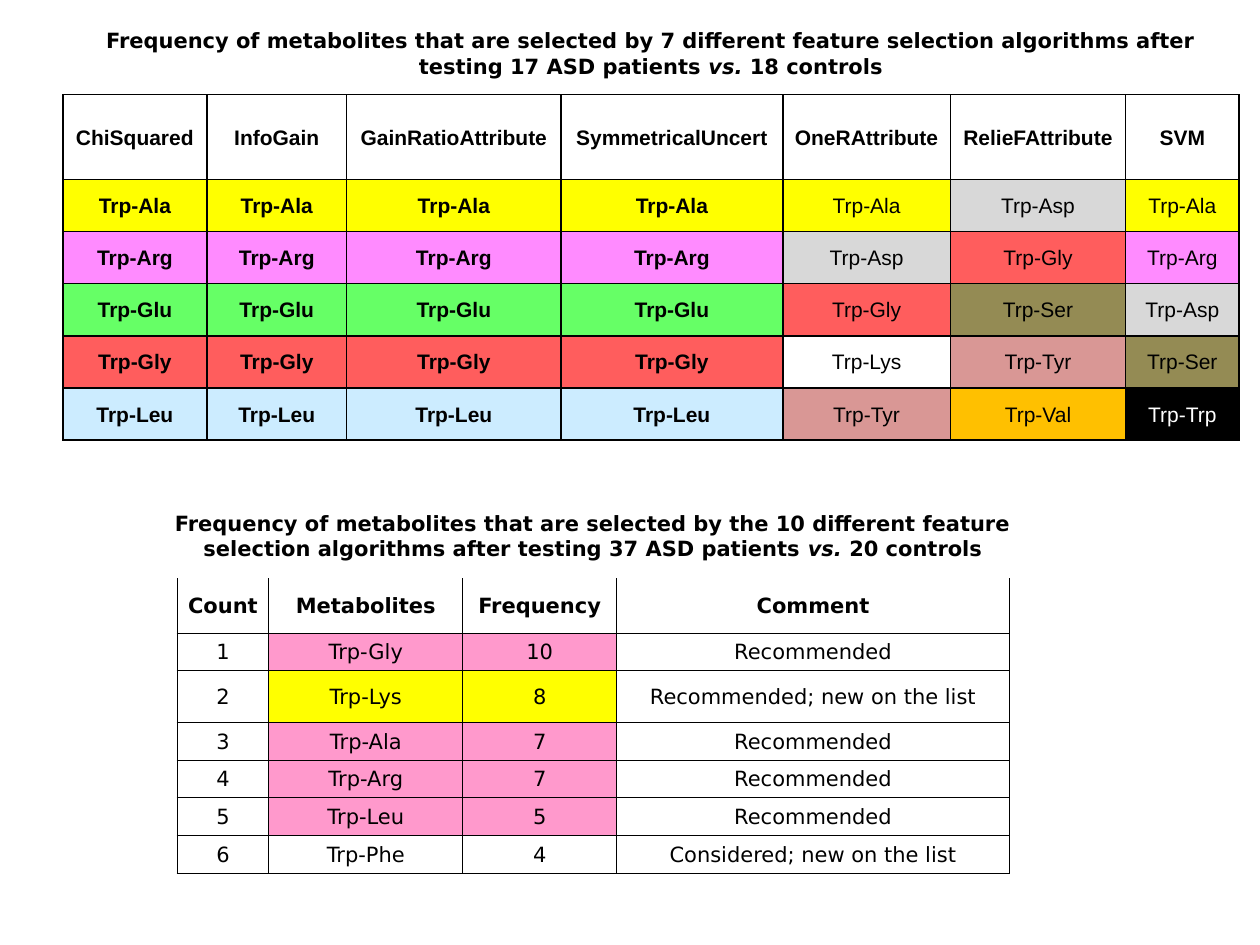
"""Build a slide with two tables of metabolite selection frequencies."""
from lxml.etree import SubElement
from pptx import Presentation
from pptx.dml.color import RGBColor
from pptx.enum.text import MSO_ANCHOR as Anchor, PP_ALIGN as Align
from pptx.oxml.ns import qn
from pptx.util import Cm, Pt


def write(text_frame, texts, font_name, bold, color="000000"):
    paragraph = text_frame.paragraphs[0]
    paragraph.alignment = Align.CENTER
    font = paragraph.font
    font.name, font.size, font.bold = font_name, Pt(12), bold
    font.color.rgb = RGBColor.from_string(color)
    for text in texts:
        run = paragraph.add_run()
        run.text = text
        if text == "vs. ":
            run.font.italic = True


def format_cell(cell, edges, width, fill=None):
    cell.vertical_anchor = Anchor.MIDDLE
    cell.margin_left = cell.margin_right = cell.margin_top = Cm(0.03)
    cell.margin_bottom = 0
    properties = cell._tc.get_or_add_tcPr()
    for edge in "LRTB":
        line = SubElement(properties, qn(f"a:ln{edge}"), w=str(Pt(width)))
        if edge in edges:
            solid = SubElement(line, qn("a:solidFill"))
            SubElement(solid, qn("a:srgbClr"), val="000000")
        else:
            SubElement(line, qn("a:noFill"))
    if fill:
        cell.fill.solid()
        cell.fill.fore_color.rgb = RGBColor.from_string(fill)
    else:
        cell.fill.background()


presentation = Presentation()
presentation.slide_width, presentation.slide_height = Cm(25.4), Cm(19.05)
slide = presentation.slides.add_slide(presentation.slide_layouts[5])

title = slide.shapes.title
title.left, title.top, title.width, title.height = Cm(1.27), Cm(0.43), Cm(23.7), Cm(1.28)
write(title.text_frame, [
    "Frequency of metabolites that are selected by 7 different feature selection "
    "algorithms after testing 17 ASD patients ", "vs. ", "18 controls"], "DejaVu Sans", True)

algorithms = ["ChiSquared", "InfoGain", "GainRatioAttribute", "SymmetricalUncert",
              "OneRAttribute", "RelieFAttribute", "SVM"]
selections = [["Ala", "Arg", "Glu", "Gly", "Leu"]] * 4 + [
    ["Ala", "Asp", "Gly", "Lys", "Tyr"],
    ["Asp", "Gly", "Ser", "Tyr", "Val"],
    ["Ala", "Arg", "Asp", "Ser", "Trp"]]
metabolite_fills = {
    "Ala": "FFFF00", "Arg": "FF8BFF", "Glu": "66FF66", "Gly": "FF5D5D", "Leu": "CCECFF",
    "Asp": "D8D8D8", "Ser": "948B54", "Tyr": "D99795", "Val": "FFC000", "Trp": "000000"}
algorithm_widths = [2.9, 2.82, 4.32, 4.47, 3.38, 3.53, 2.29]
algorithm_heights = [1.71] + [1.05] * 5

frequencies = [
    ("Count", "Metabolites", "Frequency", "Comment"),
    ("1", "Trp-Gly", "10", "Recommended"),
    ("2", "Trp-Lys", "8", "Recommended; new on the list"),
    ("3", "Trp-Ala", "7", "Recommended"),
    ("4", "Trp-Arg", "7", "Recommended"),
    ("5", "Trp-Leu", "5", "Recommended"),
    ("6", "Trp-Phe", "4", "Considered; new on the list")]
frequency_fills = [None, "FF99CC", "FFFF00", "FF99CC", "FF99CC", "FF99CC", None]
frequency_widths = [0.18, 1.85, 3.91, 3.1, 7.92, 0.16]
frequency_heights = [1.7, 1.1, 0.76, 1.04] + [0.76] * 4

tables = []
for left, top, widths, heights in [
        (1.27, 1.91, algorithm_widths, algorithm_heights),
        (3.39, 9.96, frequency_widths, frequency_heights)]:
    table = slide.shapes.add_table(len(heights), len(widths), Cm(left), Cm(top),
                                   Cm(sum(widths)), Cm(sum(heights))).table
    table.first_row = table.horz_banding = False
    for column, width in zip(table.columns, widths):
        column.width = Cm(width)
    for row, height in zip(table.rows, heights):
        row.height = Cm(height)
    tables.append(table)
algorithm_table, frequency_table = tables

for column, (algorithm, metabolites) in enumerate(zip(algorithms, selections)):
    for row, name in enumerate([algorithm] + metabolites):
        cell = algorithm_table.cell(row, column)
        text = f"Trp-{name}" if row else name
        color = "FFFFFF" if name == "Trp" else "000000"
        write(cell.text_frame, [text], "Arial", row == 0 or column < 4, color)
        format_cell(cell, "LRTB", 1, metabolite_fills.get(name))

heading = frequency_table.cell(0, 0)
heading.merge(frequency_table.cell(0, 5))
write(heading.text_frame, [
    "Frequency of metabolites that are selected by the 10 different feature selection "
    "algorithms after testing 37 ASD patients ", "vs. ", "20 controls"], "DejaVu Sans", True)
for column in range(6):
    format_cell(frequency_table.cell(0, column), "", 0.5)

for row, (values, fill) in enumerate(zip(frequencies, frequency_fills), start=1):
    for column, text in enumerate(("",) + values + ("",)):
        cell = frequency_table.cell(row, column)
        edges = {0: "R", 5: "L"}.get(column, "LRB" if row == 1 else "LRTB")
        write(cell.text_frame, [text] if text else [], "DejaVu Sans", row == 1)
        format_cell(cell, edges, 0.5, fill if column in (2, 3) else None)

presentation.save("out.pptx")
